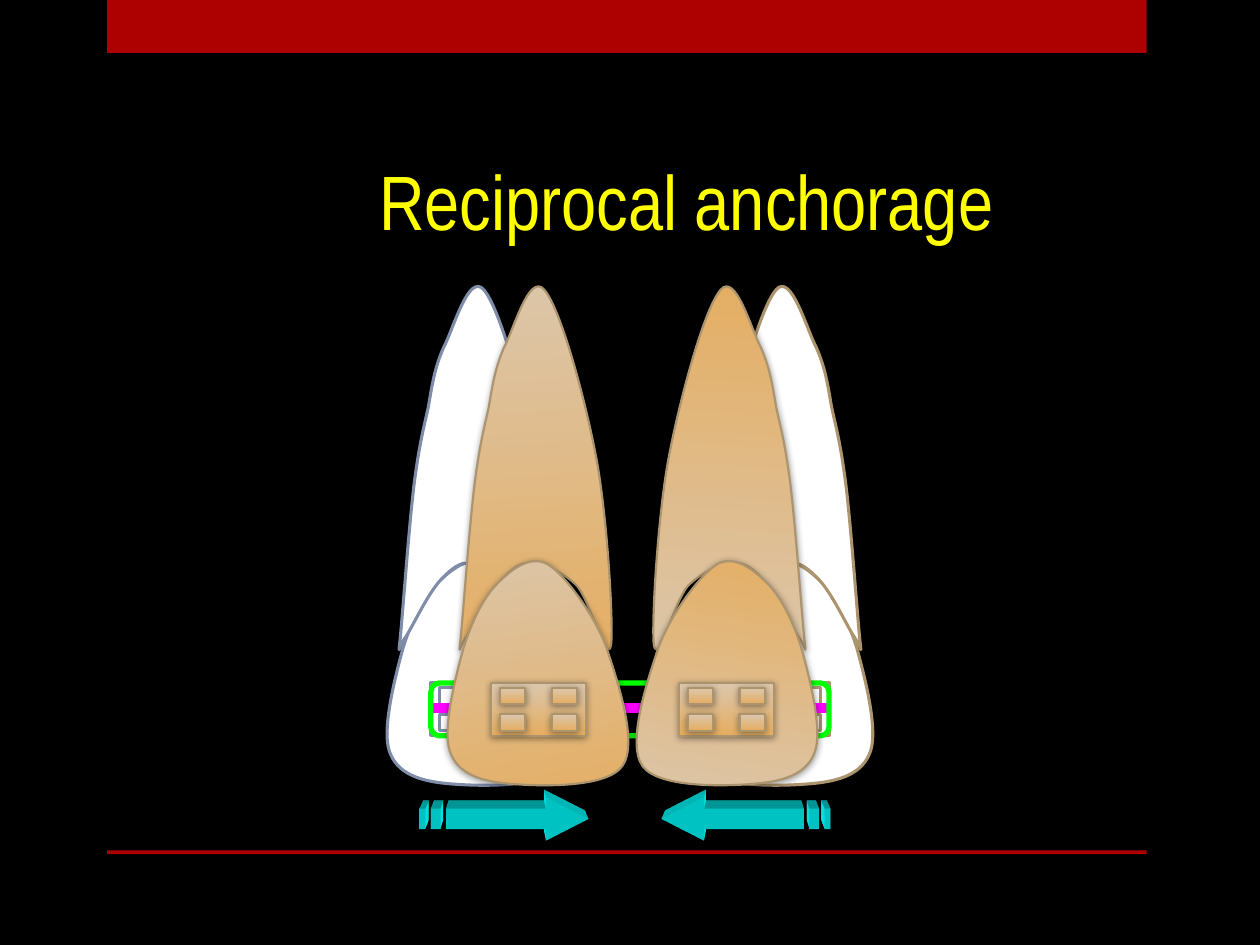
"""Build the reciprocal anchorage slide."""
from math import cos, radians, sin

from lxml.etree import SubElement as Sub
from pptx import Presentation
from pptx.dml.color import RGBColor as Rgb
from pptx.enum.shapes import MSO_CONNECTOR as Wire, MSO_SHAPE as Form
from pptx.enum.text import MSO_ANCHOR as Anchor, PP_ALIGN as Align
from pptx.oxml.ns import qn
from pptx.oxml.xmlchemy import OxmlElement as Node
from pptx.util import Cm, Pt

TITLE = "Reciprocal anchorage "
THEME = {
    "back": "000000", "bar": "AD0101", "title": "FFFF00", "white": "FFFFFF",
    "blue": "808DA9", "tan": "AC956E", "light": "DBC7AD", "dark": "E5AD60",
    "wire": "FF00FF", "band": "00FF00", "arrow": "00FFFF",
    "font": "Arial Narrow", "size": 44,
}
WIDTH, HEIGHT = 10, 7.5
BARS = [(0.85, 0, 8.25, 0.42), (0.85, 6.75, 8.25, 0.03)]
CROWN = (-9.1, [
    (3.2, 5.14), (3.14, 5.36), (3.03, 5.78), (3.09, 5.96),
    (3.15, 6.14), (3.33, 6.2), (3.56, 6.22), (3.78, 6.24), (4.33, 6.26), (4.46, 6.08),
    (4.59, 5.9), (4.42, 5.4), (4.33, 5.13), (4.23, 4.87), (4.01, 4.57), (3.87, 4.48),
    (3.73, 4.4), (3.58, 4.52), (3.47, 4.63), (3.36, 4.74), (3.27, 4.92), (3.2, 5.14)])
ROOT = (-3.2, [
    (3.18, 5.03), (3.2, 4.82), (3.25, 4.13), (3.29, 3.82),
    (3.33, 3.52), (3.36, 3.41), (3.4, 3.23), (3.43, 3.05), (3.45, 2.92), (3.52, 2.76),
    (3.6, 2.61), (3.72, 2.16), (3.84, 2.3), (3.97, 2.45), (4.16, 3.15), (4.25, 3.62),
    (4.34, 4.09), (4.39, 4.95), (4.37, 5.12), (4.34, 5.29), (4.2, 4.76), (4.1, 4.65),
    (4, 4.55), (3.86, 4.48), (3.76, 4.47), (3.67, 4.46), (3.62, 4.48), (3.52, 4.58),
    (3.4, 4.69), (3.27, 4.99), (3.21, 5.07), (3.16, 5.14), (3.16, 5.24), (3.18, 5.03)])
BRACE = (3.42, 5.42, 0.75, 0.42)
PADS = [(x, y) for y in (0.04, 0.25) for x in (0.07, 0.48)]
PAD = (0.2, 0.13)
ARROW = [
    [(4.33, 6.33), (4.33, 6.42), (3.54, 6.42), (3.54, 6.58), (4.33, 6.58), (4.33, 6.67), (4.67, 6.5)],
    [(3.42, 6.42), (3.42, 6.58), (3.5, 6.58), (3.5, 6.42)],
    [(3.33, 6.42), (3.33, 6.58), (3.38, 6.58), (3.38, 6.42)],
]
BACK_TEETH = [
    {"flip": False, "shift": 0, "line": "blue", "solid": True},
    {"flip": True, "shift": 0, "line": "tan", "solid": True},
]
FRONT_TEETH = [
    {"flip": True, "shift": -0.44, "line": "tan", "solid": False},
    {"flip": False, "shift": 0.48, "line": "tan", "solid": False},
]


def inch(val):
    return Cm(val * 2.54)


def hue(name):
    return Rgb.from_string(THEME[name])


def turn(point, angle):
    x, y = point
    c, s = cos(radians(angle)), sin(radians(angle))
    return x * c - y * s, x * s + y * c


def paint(shape, fill=None, line=None, width=1):
    shape.shadow.inherit = False
    if fill:
        shape.fill.solid()
        shape.fill.fore_color.rgb = hue(fill)
    else:
        shape.fill.background()
    if line:
        shape.line.color.rgb = hue(line)
        shape.line.width = Pt(width)
    else:
        shape.line.fill.background()


def shade(shape, names):
    shape.fill.gradient()
    shape.fill.gradient_angle = 270
    for stop, name in zip(shape.fill.gradient_stops, names):
        stop.color.rgb = hue(name)
    glow = Sub(shape._element.spPr.find(qn("a:effectLst")), qn("a:outerShdw"),
               blurRad="50800", dist="12700", dir="5280000", rotWithShape="0")
    tint = Sub(glow, qn("a:srgbClr"), val=THEME["back"])
    Sub(tint, qn("a:alpha"), val="40000")


def block(shapes, form, box):
    return shapes.add_shape(form, *map(inch, box))


def outline(shapes, loops):
    pen = None
    for loop in loops:
        start, *rest = [tuple(map(inch, point)) for point in loop]
        if pen:
            pen.move_to(*start)
        else:
            pen = shapes.build_freeform(*start)
        pen.add_line_segments(rest, close=True)
    return pen.convert_to_shape()


def curve(shapes, points, angle):
    shape = outline(shapes, [[turn(point, -angle) for point in points]])
    route = shape._element.find(".//" + qn("a:path"))
    legs = route.findall(qn("a:lnTo"))
    for i in range(0, len(legs), 3):
        bend = Node("a:cubicBezTo")
        legs[i].addprevious(bend)
        for leg in legs[i:i + 3]:
            bend.append(leg[0])
            route.remove(leg)
    mid = shape.left + shape.width / 2, shape.top + shape.height / 2
    x, y = turn(mid, angle)
    shape.left, shape.top = round(x - shape.width / 2), round(y - shape.height / 2)
    shape.rotation = angle % 360
    return shape


def tooth(slide, flip, shift, line, solid):
    shapes = slide.shapes.add_group_shape().shapes
    side = -1 if flip else 1
    ramp = ("light", "dark")
    parts = []
    for angle, points in (ROOT, CROWN) if not solid else (CROWN, ROOT):
        moved = [((WIDTH - x if flip else x) + shift, y) for x, y in points]
        parts.append((curve(shapes, moved, side * angle), ramp[::side]))
    if not solid:
        shapes._spTree.append(parts[1][0]._element)
    x, y, w, h = BRACE
    left = (WIDTH - x - w if flip else x) + shift
    boxes = [(left, y, w, h)] + [(left + dx, y + dy, *PAD) for dx, dy in PADS]
    parts += [(block(shapes, Form.RECTANGLE, box), ramp) for box in boxes]
    for part, names in parts:
        paint(part, "white", line, 1.75 if solid else 1.25)
        if not solid:
            shade(part, names)


def arrow(slide, flip):
    loops = [[(WIDTH - 0.08 - x if flip else x, y) for x, y in loop] for loop in ARROW]
    shape = outline(slide.shapes, loops)
    paint(shape, "arrow")
    props = shape._element.spPr
    scene = Sub(props, qn("a:scene3d"))
    Sub(scene, qn("a:camera"), prst="legacyPerspectiveTop")
    Sub(scene, qn("a:lightRig"), rig="legacyFlat3", dir="t")
    solid = Sub(props, qn("a:sp3d"), extrusionH="430200", prstMaterial="legacyMatte")
    Sub(Sub(solid, qn("a:extrusionClr")), qn("a:srgbClr"), val=THEME["arrow"])


def head(slide):
    title = slide.shapes.title
    spots = zip(("left", "top", "width", "height"), map(inch, (1.26, 0.75, 8.52, 1.25)))
    frame = title.text_frame
    frame.text = TITLE
    para = frame.paragraphs[0]
    looks = [
        (title, dict(spots)),
        (frame, {"vertical_anchor": Anchor.BOTTOM, "word_wrap": True}),
        (para, {"alignment": Align.CENTER}),
        (para.runs[0].font, {"name": THEME["font"], "size": Pt(THEME["size"])}),
        (para.runs[0].font.color, {"rgb": hue("title")}),
    ]
    for item, values in looks:
        for key, val in values.items():
            setattr(item, key, val)


def main():
    deck = Presentation()
    deck.slide_width, deck.slide_height = inch(WIDTH), inch(HEIGHT)
    slide = deck.slides.add_slide(deck.slide_layouts[5])
    slide.background.fill.solid()
    slide.background.fill.fore_color.rgb = hue("back")
    for box in BARS:
        paint(block(slide.shapes, Form.RECTANGLE, box), "bar")
    head(slide)
    for spec_row in BACK_TEETH:
        tooth(slide, **spec_row)
    x, y, w, h = BRACE
    wire = slide.shapes.add_connector(Wire.STRAIGHT, *map(inch, (x, 5.62, WIDTH - x, 5.62)))
    wire.line.color.rgb = hue("wire")
    wire.line.width = Pt(6)
    Sub(wire._element.spPr, qn("a:effectLst"))
    band = block(slide.shapes, Form.ROUNDED_RECTANGLE, (x, y, WIDTH - 2 * x, h))
    paint(band, None, "band", 3)
    for flip in (False, True):
        arrow(slide, flip)
    for row in FRONT_TEETH:
        tooth(slide, **row)
    deck.save("out.pptx")


if __name__ == "__main__":
    main()
